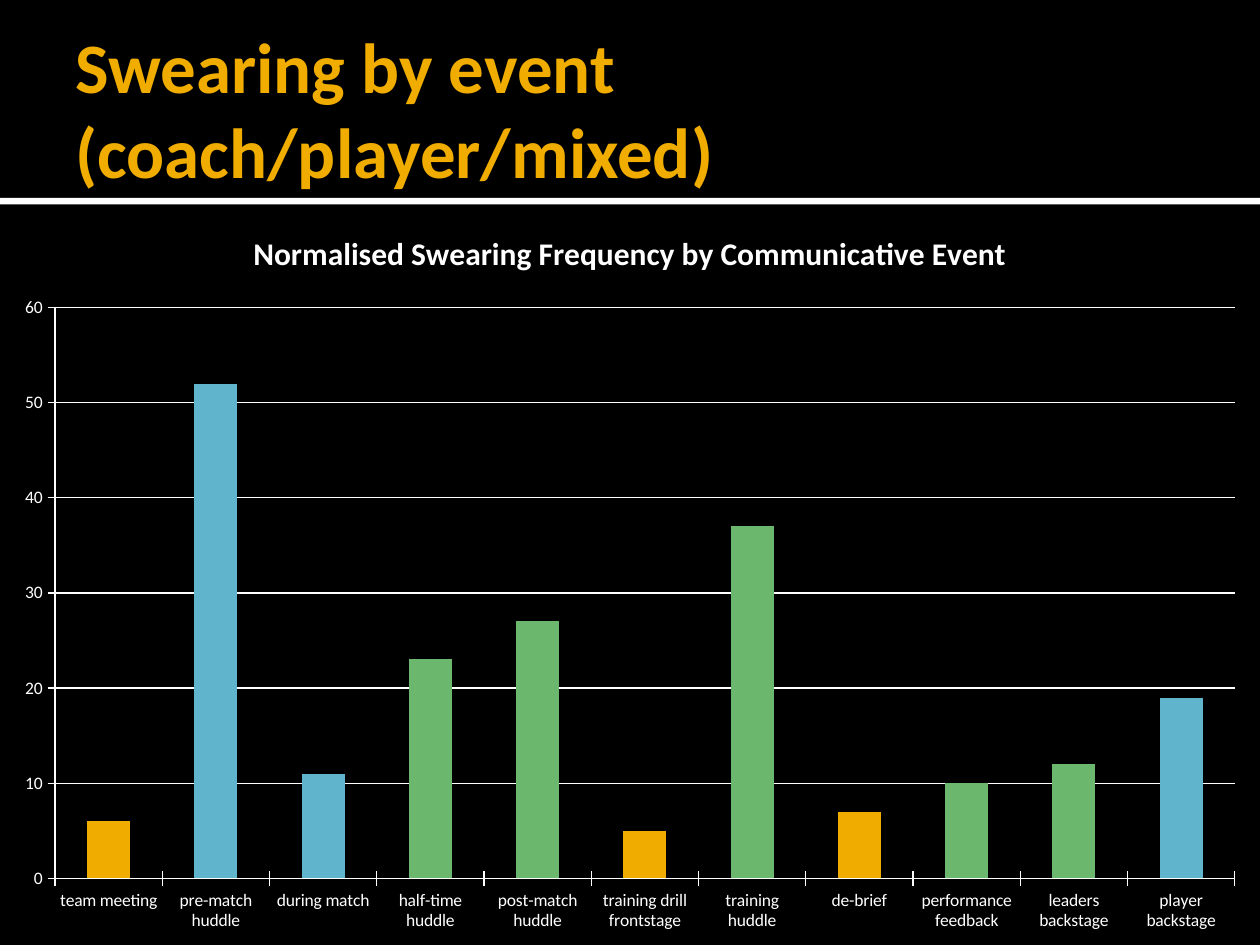
from pptx import Presentation
from pptx.chart.data import CategoryChartData
from pptx.dml.color import RGBColor
from pptx.enum.chart import XL_CHART_TYPE, XL_TICK_MARK
from pptx.enum.shapes import MSO_SHAPE
from pptx.enum.text import MSO_ANCHOR, MSO_AUTO_SIZE, PP_ALIGN
from pptx.util import Cm, Pt

COLOURS = {
    "background": "000000",
    "text": "FFFFFF",
    "coach": "F0AD00",
    "player": "60B5CC",
    "mixed": "6BB76D",
}
FONT = "Calibri"

EVENTS = [
    ("team meeting", 6, "coach"),
    ("pre-match huddle", 52, "player"),
    ("during match", 11, "player"),
    ("half-time huddle", 23, "mixed"),
    ("post-match huddle", 27, "mixed"),
    ("training drill frontstage", 5, "coach"),
    ("training huddle", 37, "mixed"),
    ("de-brief", 7, "coach"),
    ("performance feedback", 10, "mixed"),
    ("leaders backstage", 12, "mixed"),
    ("player backstage", 19, "player"),
]


class SlideBuilder:
    """Holds the style and the slide being filled."""

    def __init__(self, page):
        self.page = page
        self.paint(page.background.fill, "background")

    def paint(self, fill, colour):
        fill.solid()
        fill.fore_color.rgb = RGBColor.from_string(COLOURS[colour])

    def style_font(self, font, size, colour, bold=False):
        font.name = FONT
        font.size = Pt(size)
        font.bold = bold
        font.color.rgb = RGBColor.from_string(COLOURS[colour])

    def title(self, text, left, top, width, height):
        box = self.page.shapes.title
        box.left, box.top, box.width, box.height = map(Cm, (left, top, width, height))
        frame = box.text_frame
        frame.word_wrap = True
        frame.auto_size = MSO_AUTO_SIZE.NONE
        frame.vertical_anchor = MSO_ANCHOR.MIDDLE
        frame.margin_left = Cm(0.25)
        frame.margin_right = frame.margin_top = frame.margin_bottom = Cm(0.13)
        para = frame.paragraphs[0]
        para.alignment = PP_ALIGN.LEFT
        span = para.add_run()
        span.text = text
        self.style_font(span.font, 40.5, "coach", bold=True)

    def band(self, colour, left, top, width, height):
        band = self.page.shapes.add_shape(
            MSO_SHAPE.RECTANGLE, *map(Cm, (left, top, width, height)))
        band.shadow.inherit = False
        self.paint(band.fill, colour)
        band.line.fill.background()

    def column_chart(self, heading, events, left, top, width, height):
        """Draws one column per event, coloured by its speaker group."""
        data = CategoryChartData(number_format="General")
        data.categories = [name for name, _, _ in events]
        data.add_series("Series 1", [value for _, value, _ in events])
        chart = self.page.shapes.add_chart(
            XL_CHART_TYPE.COLUMN_CLUSTERED,
            *map(Cm, (left, top, width, height)), data).chart
        self.style_font(chart.font, 10, "text")
        chart.has_legend = False

        chart.has_title = True
        span = chart.chart_title.text_frame.paragraphs[0].add_run()
        span.text = heading
        self.style_font(span.font, 18, "text", bold=True)
        chart.chart_title.include_in_layout = False

        chart.value_axis.has_major_gridlines = True
        chart.value_axis.minimum_scale = 0
        chart.value_axis.maximum_scale = 60
        chart.value_axis.major_unit = 10
        for axis in (chart.category_axis, chart.value_axis):
            axis.major_tick_mark = XL_TICK_MARK.CROSS
            self.thin_line(axis.format.line)
        self.thin_line(chart.value_axis.major_gridlines.format.line)

        plot = chart.plots[0]
        plot.gap_width = 150
        plot.vary_by_categories = False
        series = plot.series[0]
        series.invert_if_negative = False
        self.paint(series.format.fill, "coach")
        for index, (_, _, group) in enumerate(events):
            self.paint(series.points[index].format.fill, group)

    def thin_line(self, line):
        line.width = Pt(0.75)
        self.paint(line.fill, "text")


def main():
    deck = Presentation()
    deck.slide_width, deck.slide_height = Cm(25.4), Cm(19.05)
    title_only = deck.slide_layouts[5]
    builder = SlideBuilder(deck.slides.add_slide(title_only))
    builder.band("text", 0, 3.99, 25.4, 0.13)
    builder.title("Swearing by event (coach/player/mixed)", 1.27, 0.43, 22.86, 3.48)
    builder.column_chart("Normalised Swearing Frequency by Communicative Event",
                         EVENTS, 0, 4.12, 25.4, 14.93)
    deck.save("out.pptx")


if __name__ == "__main__":
    main()
